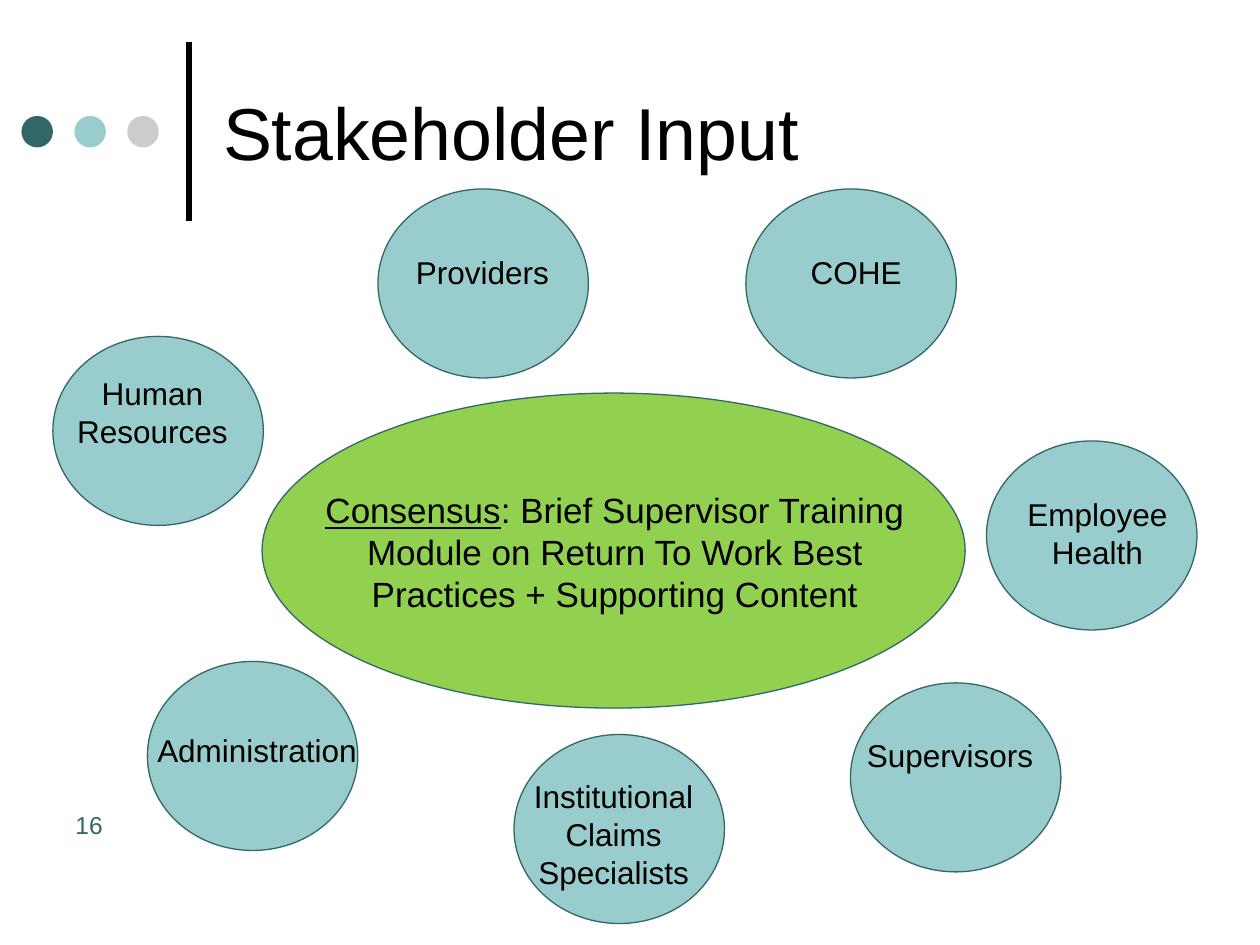
from lxml.etree import SubElement
from pptx import Presentation
from pptx.dml.color import RGBColor
from pptx.enum.shapes import MSO_CONNECTOR as Conn, MSO_SHAPE as Shape
from pptx.enum.text import MSO_ANCHOR as Anchor, MSO_AUTO_SIZE as Fit, PP_ALIGN as Align
from pptx.oxml.ns import qn
from pptx.util import Inches, Pt

DARK, TEAL, GRAY = "336666", "99CCCC", "CCCCCC"
BLACK, GREEN = "000000", "92D050"


def color(code):
    return RGBColor.from_string(code)


class Deck:
    font = "Arial"

    def __init__(self):
        self.prs = Presentation()
        self.prs.slide_width, self.prs.slide_height = Inches(10), Inches(7.5)
        self.slide = self.prs.slides.add_slide(self.prs.slide_layouts[5])

    def style(self, para, size, ink=BLACK, align=Align.CENTER):
        para.alignment = align
        para.font.name, para.font.size = self.font, Pt(size)
        para.font.color.rgb = color(ink)

    def title(self, text, *box):
        shape = self.slide.shapes.title
        shape.left, shape.top, shape.width, shape.height = map(Inches, box)
        shape.text_frame.text = text
        shape.text_frame.vertical_anchor = Anchor.MIDDLE
        self.style(shape.text_frame.paragraphs[0], 42, align=Align.LEFT)

    def rule(self, x, top, end, width):
        line = self.slide.shapes.add_connector(
            Conn.STRAIGHT, Inches(x), Inches(top), Inches(x), Inches(end))
        line.line.color.rgb, line.line.width = color(BLACK), Pt(width)
        SubElement(line._element.spPr, qn("a:effectLst"))

    def oval(self, box, fill, edge=None):
        shape = self.slide.shapes.add_shape(Shape.OVAL, *map(Inches, box))
        shape.shadow.inherit = False
        shape.fill.solid()
        shape.fill.fore_color.rgb = color(fill)
        if edge:
            shape.line.color.rgb, shape.line.width = color(edge), Pt(0.75)
        else:
            shape.line.fill.background()

    def text(self, box, paras, size, ink=BLACK, align=Align.CENTER, grow=True):
        """Each paragraph is a list of (text, underlined) runs."""
        frame = self.slide.shapes.add_textbox(*map(Inches, box)).text_frame
        frame.word_wrap = True
        if grow:
            frame.auto_size = Fit.SHAPE_TO_FIT_TEXT
        for i, runs in enumerate(paras):
            para = frame.add_paragraph() if i else frame.paragraphs[0]
            for words, under in runs:
                run = para.add_run()
                run.text = words
                if under:
                    run.font.underline = True
            self.style(para, size, ink, align)


def main():
    deck = Deck()

    # Heading with rule and dots
    deck.rule(1.5, 0.33, 1.75, 3)
    for i, fill in enumerate((DARK, TEAL, GRAY)):
        deck.oval((0.17 + 0.42 * i, 0.92, 0.25, 0.25), fill)
    deck.title("Stakeholder Input", 1.67, 0.25, 8, 1.58)
    deck.text((0.5, 6.38, 1.42, 0.5), [[("16", False)]], 14, DARK, Align.LEFT, False)

    # Shared result in the middle
    deck.oval((2.08, 3.12, 5.58, 2.5), GREEN, DARK)
    deck.text((2.42, 3.83, 4.92, 1.11), [[
        ("Consensus", True),
        (": Brief Supervisor Training Module on Return To Work Best "
         "Practices + Supporting Content", False)]], 20)

    # Stakeholders: circle corner, label box, label paragraphs
    groups = [
        ((4.08, 5.83), (4.08, 6.12, 1.58, 1.01), ["Institutional Claims", "Specialists"]),
        ((1.17, 5.25), (1.08, 5.75, 1.92, 0.4), ["Administration"]),
        ((7.83, 3.5), (8, 3.88, 1.42, 0.71), ["Employee Health"]),
        ((5.92, 1.5), (6.17, 1.96, 1.25, 0.4), ["COHE"]),
        ((3, 1.5), (3.08, 1.96, 1.5, 0.4), ["Providers"]),
        ((0.42, 2.67), (0.5, 2.92, 1.42, 0.71), ["Human Resources"]),
        ((6.75, 5.42), (6.75, 5.79, 1.58, 0.4), ["Supervisors"]),
    ]
    for spot, box, names in groups:
        deck.oval((*spot, 1.67, 1.5), TEAL, DARK)
        deck.text(box, [[(name, False)] for name in names], 18)

    deck.prs.save("out.pptx")


if __name__ == "__main__":
    main()
